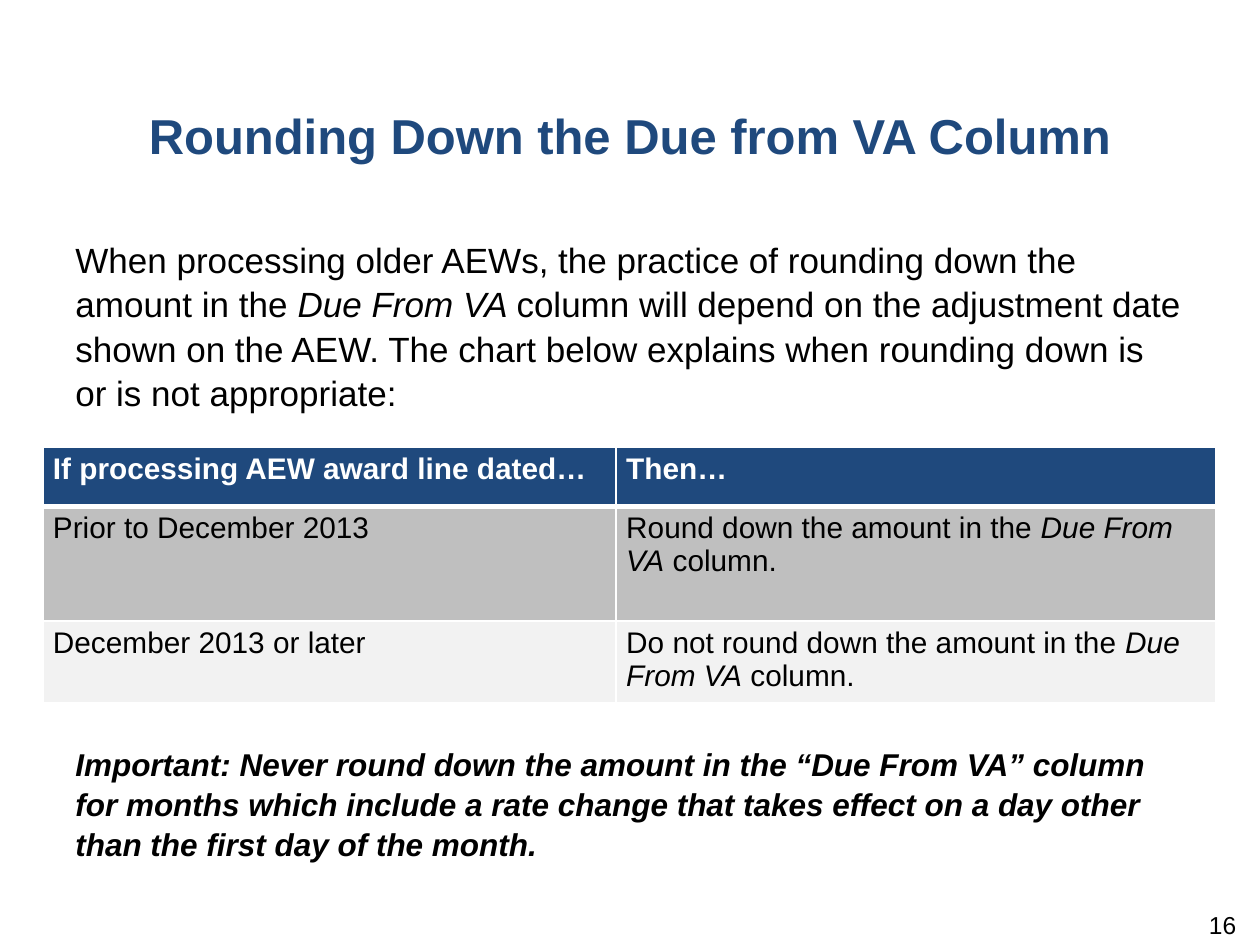
from dataclasses import dataclass

from pptx import Presentation
from pptx.dml.color import RGBColor
from pptx.enum.text import MSO_ANCHOR, PP_ALIGN
from pptx.oxml import parse_xml
from pptx.oxml.ns import nsdecls
from pptx.util import Inches, Pt

NAVY = RGBColor(0x1F, 0x49, 0x7D)
BLACK = RGBColor(0x00, 0x00, 0x00)
WHITE = RGBColor(0xFF, 0xFF, 0xFF)
GRAY = RGBColor(0xBF, 0xBF, 0xBF)
PALE = RGBColor(0xF2, 0xF2, 0xF2)

Runs = list[tuple[str, bool]]  # text, italic


@dataclass
class Block:
    at: tuple[float, float, float, float]
    runs: Runs
    size: int
    color: RGBColor = BLACK
    bold: bool = False
    align: PP_ALIGN = PP_ALIGN.LEFT
    spacing: float = 1.05
    after: int = 6
    inset_top: float = 0.05


@dataclass
class Row:
    height: float
    fill: RGBColor
    color: RGBColor
    bold: bool
    cells: tuple[Runs, Runs]
    top: int = 1
    bottom: int = 1


BLOCKS = [
    # Title
    Block((0, 0.74, 10, 1.19), [("Rounding Down the Due from VA Column", False)],
          28, NAVY, True, PP_ALIGN.CENTER, spacing=1.1),
    # Introduction
    Block((0.5, 1.83, 9, 1.42), [
        ("When processing older AEWs, the practice of rounding down the amount in the ", False),
        ("Due From VA ", True),
        ("column will depend on the adjustment date shown on the AEW. The chart below "
         "explains when rounding down is or is not appropriate:", False)], 20),
    # Page number
    Block((7.58, 7.22, 2.33, 0.4), [("16", False)], 14,
          align=PP_ALIGN.RIGHT, spacing=1.0, inset_top=0),
    # Closing warning
    Block((0.5, 5.85, 9, 1.01), [
        ("Important: Never round down the amount in the “Due From VA” column for months "
         "which include a rate change that takes effect on a day other than the first day "
         "of the month.", True)], 18, bold=True, after=0),
]

COLUMN_WIDTHS = (4.55, 4.76)
ROWS = [
    Row(0.47, NAVY, WHITE, True,
        ([("If processing AEW award line dated…", False)], [("Then…", False)]), bottom=3),
    Row(0.91, GRAY, BLACK, False,
        ([("Prior to December 2013", False)],
         [("Round down the amount in the ", False), ("Due From VA", True),
          (" column.", False)]), top=3),
    Row(0.63, PALE, BLACK, False,
        ([("December 2013 or later", False)],
         [("Do not round down the amount in the ", False), ("Due From VA", True),
          (" column.", False)])),
]


def add_runs(p, runs: Runs, size: int, color: RGBColor, bold: bool) -> None:
    for text, italic in runs:
        r = p.add_run()
        r.text = text
        font = {"name": "Arial", "size": Pt(size), "bold": bold, "italic": italic}
        for name, value in font.items():
            setattr(r.font, name, value)
        r.font.color.rgb = color


def add_block(s, block: Block) -> None:
    tf = s.shapes.add_textbox(*map(Inches, block.at)).text_frame
    frame = {"word_wrap": True, "vertical_anchor": MSO_ANCHOR.TOP,
             "margin_top": Inches(block.inset_top)}
    for name, value in frame.items():
        setattr(tf, name, value)
    p = tf.paragraphs[0]
    layout = {"alignment": block.align, "line_spacing": block.spacing,
              "space_after": Pt(block.after)}
    for name, value in layout.items():
        setattr(p, name, value)
    add_runs(p, block.runs, block.size, block.color, block.bold)


def set_borders(cell, widths: dict[str, int]) -> None:
    tc_pr = cell._tc.get_or_add_tcPr()
    # Border lines must come before the fill
    for i, (side, width) in enumerate(widths.items()):
        tc_pr.insert(i, parse_xml(
            f'<a:ln{side} {nsdecls("a")} w="{Pt(width)}"><a:solidFill>'
            f'<a:srgbClr val="{WHITE}"/></a:solidFill></a:ln{side}>'))


def add_rules_table(s) -> None:
    height = sum(row.height for row in ROWS)
    table = s.shapes.add_table(
        len(ROWS), len(COLUMN_WIDTHS), Inches(0.34), Inches(3.55),
        Inches(sum(COLUMN_WIDTHS)), Inches(height)).table
    for column, width in zip(table.columns, COLUMN_WIDTHS):
        column.width = Inches(width)
    margins = {"margin_left": 0.08, "margin_right": 0.08,
               "margin_top": 0.04, "margin_bottom": 0.04}
    for i, row in enumerate(ROWS):
        table.rows[i].height = Inches(row.height)
        for j, runs in enumerate(row.cells):
            cell = table.cell(i, j)
            for name, value in margins.items():
                setattr(cell, name, Inches(value))
            cell.fill.solid()
            cell.fill.fore_color.rgb = row.fill
            set_borders(cell, {"L": 1, "R": 1, "T": row.top, "B": row.bottom})
            add_runs(cell.text_frame.paragraphs[0], runs, 17, row.color, row.bold)


def main() -> None:
    prs = Presentation()
    prs.slide_width, prs.slide_height = Inches(10), Inches(7.5)
    s = prs.slides.add_slide(prs.slide_layouts[6])
    *upper, warning = BLOCKS
    for block in upper:
        add_block(s, block)
    add_rules_table(s)
    add_block(s, warning)
    prs.save("out.pptx")


if __name__ == "__main__":
    main()
